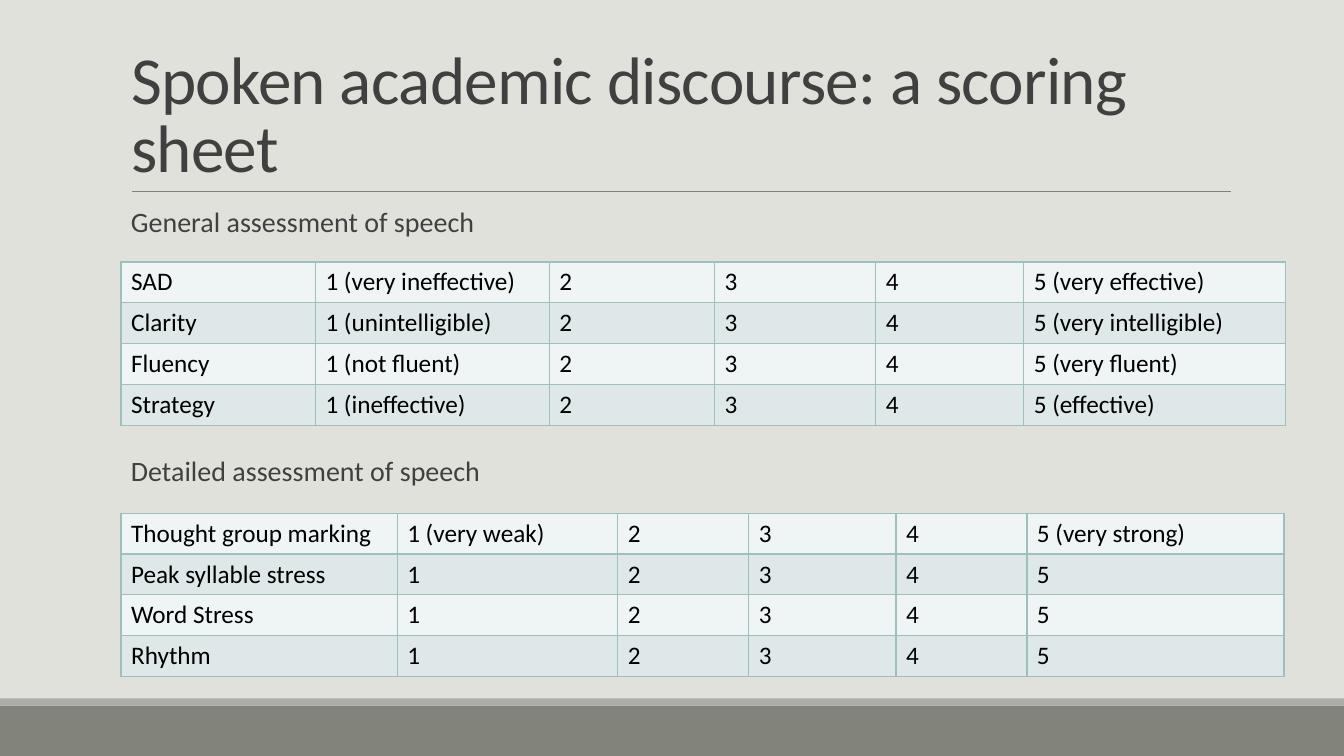
from lxml import etree
from pptx import Presentation
from pptx.dml.color import RGBColor
from pptx.enum import shapes, text
from pptx.oxml import ns
from pptx.util import Cm, Pt

FONT = "Calibri"
BACKGROUND = RGBColor(0xE1, 0xE1, 0xDB)
BAND = RGBColor(0x82, 0x84, 0x7C)
STRIPE = RGBColor(0xAC, 0xAD, 0xA8)
RULE = RGBColor(0x80, 0x80, 0x80)
HEADING = RGBColor(0x40, 0x40, 0x40)
BLACK = RGBColor(0, 0, 0)
BORDER = RGBColor(0x9D, 0xBF, 0xBE)
ROW_FILLS = (RGBColor(0xEF, 0xF4, 0xF4), RGBColor(0xDF, 0xE8, 0xE8))

GENERAL_WIDTHS = (4.9, 5.89, 4.17, 4.06, 3.73, 6.6)
GENERAL_ROWS = (
    ("SAD", "1 (very ineffective)", "5 (very effective)"),
    ("Clarity", "1 (unintelligible)", "5 (very intelligible)"),
    ("Fluency", "1 (not fluent)", "5 (very fluent)"),
    ("Strategy", "1 (ineffective)", "5 (effective)"),
)
DETAILED_WIDTHS = (6.96, 5.56, 3.3, 3.71, 3.3, 6.48)
DETAILED_ROWS = (
    ("Thought group marking", "1 (very weak)", "5 (very strong)"),
    ("Peak syllable stress", "1", "5"),
    ("Word Stress", "1", "5"),
    ("Rhythm", "1", "5"),
)


def format_runs(p, size, color):
    for r in p.runs:
        r.font.name = FONT
        r.font.size = Pt(size)
        r.font.color.rgb = color


def place(sp, left, top, width, height):
    sp.left, sp.top, sp.width, sp.height = (Cm(v) for v in (left, top, width, height))


def add_bar(s, left, top, width, height, color):
    sp = s.shapes.add_shape(
        shapes.MSO_SHAPE.RECTANGLE, Cm(left), Cm(top), Cm(width), Cm(height))
    sp.shadow.inherit = False
    sp.fill.solid()
    sp.fill.fore_color.rgb = color
    sp.line.fill.background()


def add_footer(s, left, top, width, height):
    stripe = 0.18
    add_bar(s, left, top + stripe, width, height - stripe, BAND)
    add_bar(s, left, top, width, stripe, STRIPE)


def add_title(s, title, left, top, width, height):
    sp = s.shapes.title
    place(sp, left, top, width, height)
    tf = sp.text_frame
    tf.text = title
    tf.word_wrap = True
    tf.auto_size = text.MSO_AUTO_SIZE.NONE
    tf.vertical_anchor = text.MSO_ANCHOR.BOTTOM
    p = tf.paragraphs[0]
    p.alignment = text.PP_ALIGN.LEFT
    p.line_spacing = 0.85
    format_runs(p, 48, HEADING)
    p.runs[0]._r.get_or_add_rPr().set("spc", "-50")
    bottom = Cm(top + height)
    rule = s.shapes.add_connector(
        shapes.MSO_CONNECTOR.STRAIGHT,
        Cm(left + 0.28), bottom, Cm(left + width + 0.02), bottom)
    rule.line.color.rgb = RULE
    rule.line.width = Pt(0.5)
    etree.SubElement(rule._element.spPr, ns.qn("a:effectLst"))


def add_headings(s, headings, left, top, width, height):
    sp = s.placeholders[1]
    place(sp, left, top, width, height)
    tf = sp.text_frame
    tf.text = "\n".join(headings)
    tf.word_wrap = True
    tf.auto_size = text.MSO_AUTO_SIZE.NONE
    tf.margin_left = tf.margin_right = 0
    for p, gap in zip(tf.paragraphs, (12, 154)):
        p.line_spacing = 0.9
        p.space_before = Pt(gap)
        p.space_after = Pt(2)
        pPr = p._p.get_or_add_pPr()
        pPr.set("marL", str(Cm(0.25)))
        pPr.set("indent", "0")
        etree.SubElement(pPr, ns.qn("a:buNone"))
        format_runs(p, 20, HEADING)


def add_borders(cell):
    tcPr = cell._tc.get_or_add_tcPr()
    for side in ("lnL", "lnR", "lnT", "lnB"):
        ln = etree.SubElement(tcPr, ns.qn(f"a:{side}"), w=str(Pt(1)))
        fill = etree.SubElement(ln, ns.qn("a:solidFill"))
        etree.SubElement(fill, ns.qn("a:srgbClr"), val=str(BORDER))


def add_scores(s, rows, widths, left, top, height):
    table = s.shapes.add_table(
        len(rows), len(widths), Cm(left), Cm(top), Cm(sum(widths)), Cm(height)).table
    table.first_row = table.horz_banding = False
    for column, width in zip(table.columns, widths):
        column.width = Cm(width)
    for i, (criterion, lowest, highest) in enumerate(rows):
        table.rows[i].height = Cm(height / len(rows))
        values = (criterion, lowest, "2", "3", "4", highest)
        for cell, value in zip(table.rows[i].cells, values):
            cell.text_frame.text = value
            format_runs(cell.text_frame.paragraphs[0], 18, BLACK)
            add_borders(cell)
            cell.fill.solid()
            cell.fill.fore_color.rgb = ROW_FILLS[i % 2]


def main():
    prs = Presentation()
    prs.slide_width, prs.slide_height = Cm(33.87), Cm(19.05)
    s = prs.slides.add_slide(prs.slide_layouts[1])
    s.background.fill.solid()
    s.background.fill.fore_color.rgb = BACKGROUND
    left, width = 3.05, 27.94
    add_footer(s, 0, 17.6, 33.87, 1.45)
    add_title(s, "Spoken academic discourse: a scoring sheet", left, 0.79, width, 4.04)
    add_headings(
        s, ("General assessment of speech", "Detailed assessment of speech"),
        left, 5.13, width, 11.18)
    add_scores(s, GENERAL_ROWS, GENERAL_WIDTHS, left, 6.6, 4.12)
    add_scores(s, DETAILED_ROWS, DETAILED_WIDTHS, left, 12.93, 4.12)
    prs.save("out.pptx")


if __name__ == "__main__":
    main()
